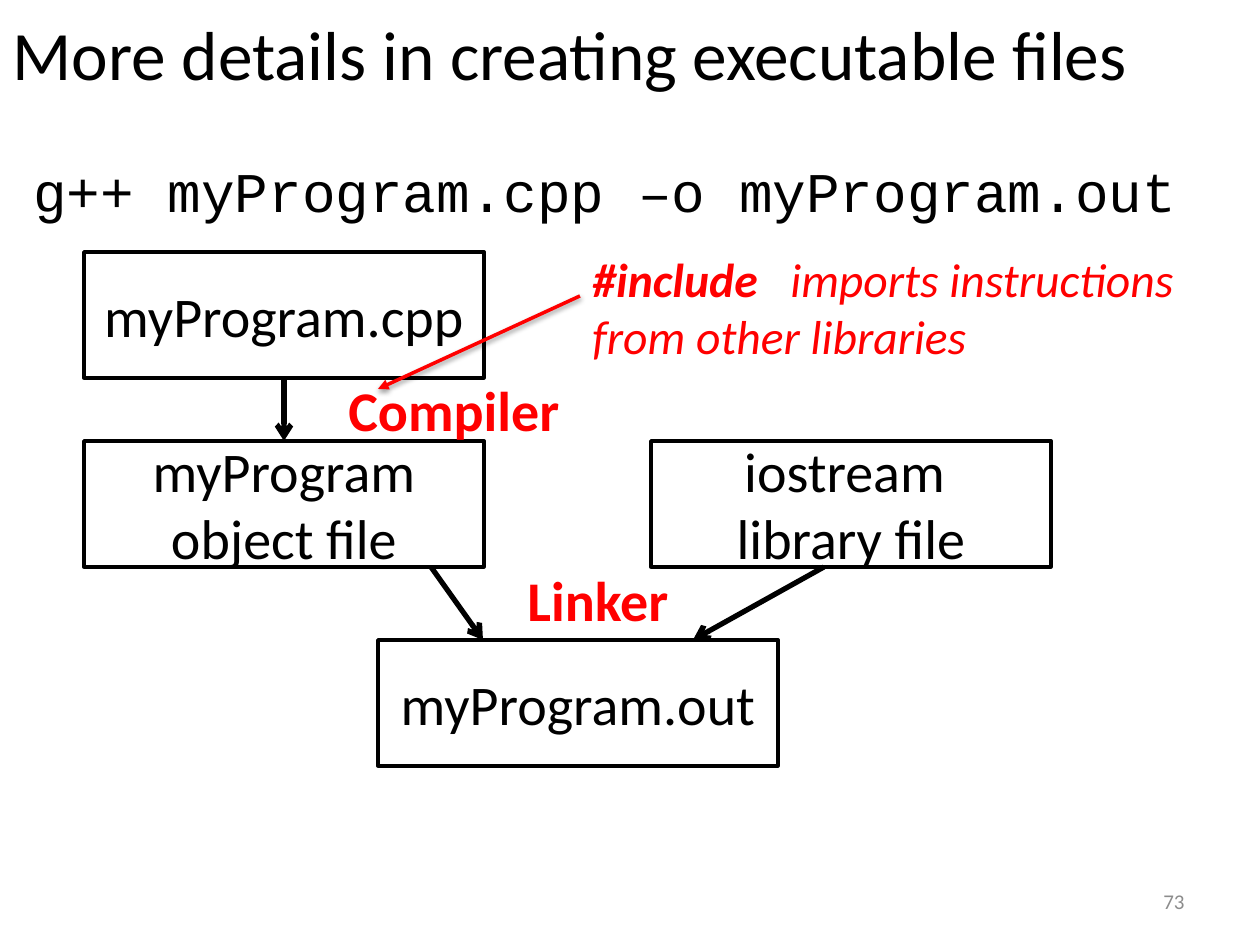
from lxml.etree import SubElement
from pptx import Presentation
from pptx.dml.color import RGBColor
from pptx.enum.shapes import MSO_CONNECTOR, MSO_SHAPE
from pptx.enum.text import MSO_ANCHOR, MSO_AUTO_SIZE, PP_ALIGN
from pptx.oxml.ns import qn
from pptx.util import Pt

PX = 7257  # EMU per px, 126 px to the inch

THEME = {
    "ink": RGBColor(0, 0, 0),
    "paper": RGBColor(255, 255, 255),
    "accent": RGBColor(255, 0, 0),
    "muted": RGBColor(0x8C, 0x8C, 0x8C),
    "title": 39.6, "main": 32, "note": 27.2, "number": 12,
    "sans": "Calibri", "mono": "Courier New",
}

TITLE = "More details in creating executable files"
BOX_SIZE = (400, 126)
FILES = [  # text, left, top
    ("myProgram.cpp", 84, 252),
    ("myProgram object file", 84, 441),
    ("iostream \vlibrary file", 651, 441),
    ("myProgram.out", 378, 640),
]
STEPS = [  # from, to
    ((284, 378), (284, 441)),
    ((431, 567), (483, 640)),
    ((824, 567), (693, 640)),
]
NOTE_BOX = (580, 244, 650, 122)
NOTE = [("#include\t", True), ("imports instructions from other libraries", False)]
NOTE_TAB = 198
NOTE_ARROW = ((580, 296), (378, 389))
TOOLS = [("Compiler", (336, 369, 238, 81)), ("Linker", (515, 559, 168, 81))]
COMMAND = ("g++ myProgram.cpp –o myProgram.out", (21, 150, 1239, 81))
PAGE = ("73", (903, 876, 294, 50))


def px(*lengths):
    return [round(length * PX) for length in lengths]


def format_font(font, size="main", color="ink", face="sans", **styles):
    font.color.rgb = THEME[color]
    values = {"size": Pt(THEME[size]), "name": THEME[face], **styles}
    for attribute, value in values.items():
        setattr(font, attribute, value)


def write(frame, text, align=PP_ALIGN.LEFT, anchor=MSO_ANCHOR.TOP, wrap=True, **font):
    frame.text = text
    frame.word_wrap = wrap
    frame.vertical_anchor = anchor
    for paragraph in frame.paragraphs:
        paragraph.alignment = align
        for run in paragraph.runs:
            format_font(run.font, **font)


def add_label(slide, text, place, grow=True, **formats):
    frame = slide.shapes.add_textbox(*px(*place)).text_frame
    write(frame, text, **formats)
    if grow:
        frame.auto_size = MSO_AUTO_SIZE.SHAPE_TO_FIT_TEXT


def add_file(slide, text, left, top):
    box = slide.shapes.add_shape(MSO_SHAPE.RECTANGLE, *px(left, top, *BOX_SIZE))
    box.shadow.inherit = False
    box.fill.solid()
    box.fill.fore_color.rgb = THEME["paper"]
    box.line.color.rgb = THEME["ink"]
    box.line.width = Pt(2)
    write(box.text_frame, text, PP_ALIGN.CENTER, MSO_ANCHOR.MIDDLE)


def add_arrow(slide, start, end, color="ink", width=3, head="arrow"):
    """Draw an arrow and return its effect list."""
    arrow = slide.shapes.add_connector(MSO_CONNECTOR.STRAIGHT, *px(*start, *end))
    arrow.line.color.rgb = THEME[color]
    arrow.line.width = Pt(width)
    SubElement(arrow.line._get_or_add_ln(), qn("a:tailEnd"), type=head)
    return SubElement(arrow._element.spPr, qn("a:effectLst"))


def add_shadow(effects):
    shadow = SubElement(effects, qn("a:outerShdw"), blurRad=str(Pt(3.1)),
                        dist=str(Pt(1.6)), dir="5400000", rotWithShape="0")
    color = SubElement(shadow, qn("a:srgbClr"), val=str(THEME["ink"]))
    SubElement(color, qn("a:alpha"), val="38000")


def add_note(slide):
    frame = slide.shapes.add_textbox(*px(*NOTE_BOX)).text_frame
    frame.word_wrap = True
    paragraph = frame.paragraphs[0]
    paragraph.space_before = Pt(5.4)
    tabs = SubElement(paragraph._p.get_or_add_pPr(), qn("a:tabLst"))
    SubElement(tabs, qn("a:tab"), pos=str(NOTE_TAB * PX), algn="l")
    for text, bold in NOTE:
        run = paragraph.add_run()
        run.text = text
        format_font(run.font, "note", "accent", bold=bold, italic=True)


def main():
    deck = Presentation()
    deck.slide_width, deck.slide_height = px(1260, 945)
    slide = deck.slides.add_slide(deck.slide_layouts[5])

    title = slide.shapes.title
    title.left, title.top, title.width, title.height = px(0, 0, 1260, 105)
    write(title.text_frame, TITLE, anchor=MSO_ANCHOR.MIDDLE, size="title")

    add_note(slide)
    for file in FILES:
        add_file(slide, *file)
    for start, end in STEPS:
        add_arrow(slide, start, end)
    for text, place in TOOLS:
        add_label(slide, text, place, wrap=False, color="accent", bold=True)
    add_label(slide, *COMMAND, face="mono")
    add_label(slide, *PAGE, grow=False, align=PP_ALIGN.RIGHT,
              anchor=MSO_ANCHOR.MIDDLE, size="number", color="muted")
    add_shadow(add_arrow(slide, *NOTE_ARROW, color="accent", width=2, head="triangle"))

    deck.save("out.pptx")


if __name__ == "__main__":
    main()
